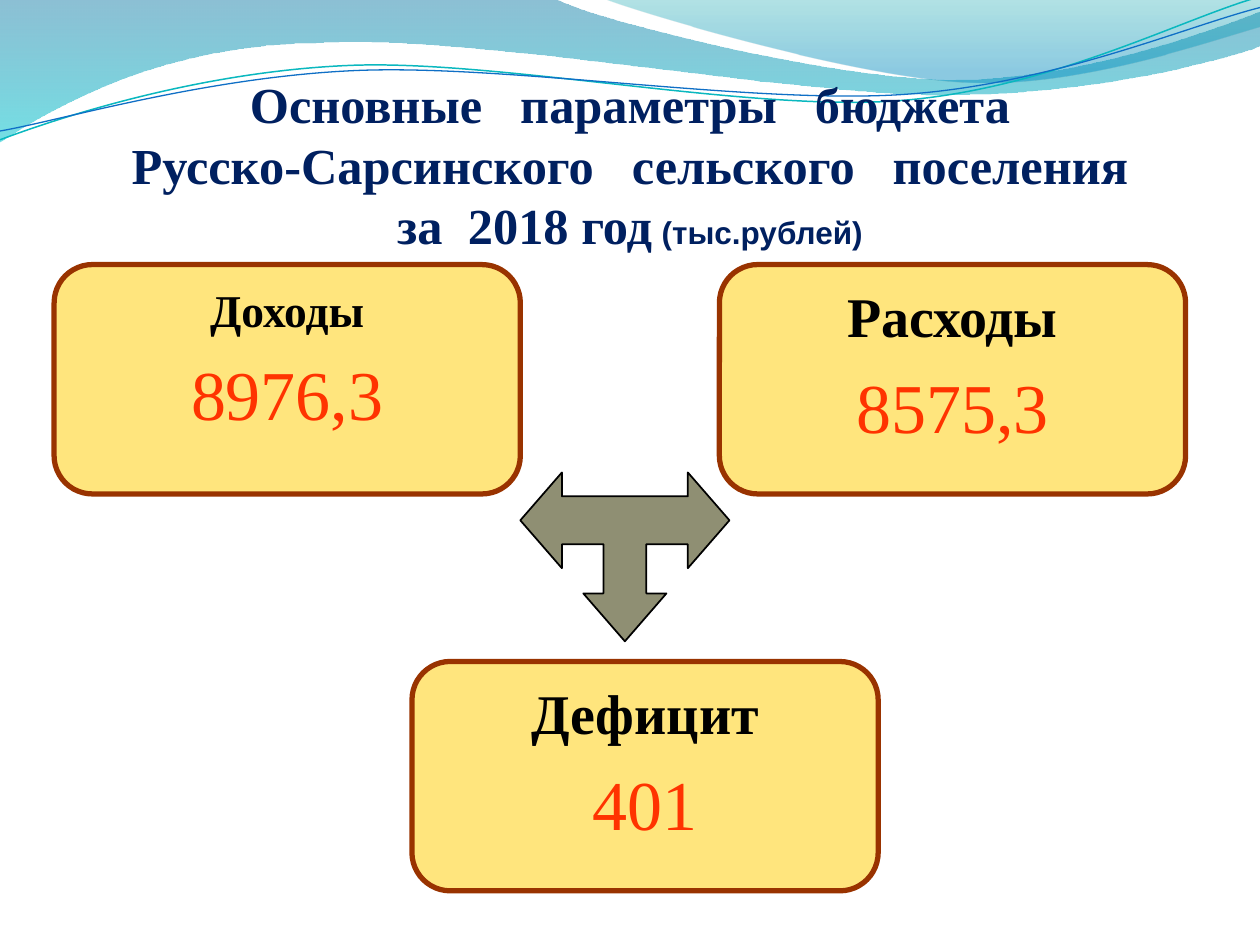
from lxml.etree import SubElement
from pptx import Presentation
from pptx.dml.color import RGBColor
from pptx.enum.shapes import MSO_SHAPE
from pptx.enum.text import MSO_ANCHOR, PP_ALIGN
from pptx.oxml.ns import qn
from pptx.util import Inches, Pt


def color(hex_value):
    return RGBColor.from_string(hex_value)


def set_opacity(shape, percents):
    """Give each colour of the shape's fill its opacity, in order."""
    for element, percent in zip(shape._element.spPr.iter(qn("a:srgbClr")), percents):
        SubElement(element, qn("a:alpha"), val=str(percent * 1000))


deck = Presentation()
deck.slide_width, deck.slide_height = Inches(10), Inches(7.5)
page = deck.slides.add_slide(deck.slide_layouts[6])

# Waves: a step of three points is a curve (two handles and an end), of one a straight line.
waves = [
    dict(start=(0, -0.01), gradient=[(0, "0074A1", 45), (1, "00C6CF", 55)], steps=[
        [(4.4, -0.01)],
        [(4.76, 0.17), (6.64, 0.63), (7.58, 0.63)],
        [(8.53, 0.63), (9.58, 0.26), (10, 0.09)],
        [(10.01, 0.36)],
        [(9.83, 0.44), (8.7, 0.76), (7.46, 0.75)],
        [(6.22, 0.75), (3.82, 0.28), (2.57, 0.34)],
        [(1.29, 0.35), (0.46, 0.83), (-0.01, 1.13)]]),
    dict(start=(4.79, -0.01), gradient=[(0, "00A1A9", 30), (0.8, "008BBF", 45)], steps=[
        [(5.09, 0.11), (6.82, 0.62), (7.69, 0.65)],
        [(8.56, 0.69), (9.61, 0.32), (10, 0.21)],
        [(10, 0)]]),
    dict(start=(0, 1.11), line=("0AB8BF", 0.85), steps=[
        [(0.48, 0.93), (1.58, 0.57), (2.77, 0.52)],
        [(3.95, 0.47), (5.93, 0.89), (7.13, 0.8)],
        [(8.33, 0.71), (9.38, 0.15), (9.98, -0.02)]]),
    dict(start=(0, 1.04), line=("0F6FC6", 0.75), steps=[
        [(0.47, 0.96), (1.64, 0.61), (2.83, 0.56)],
        [(4.03, 0.51), (5.97, 0.83), (7.17, 0.75)],
        [(8.36, 0.67), (9.41, 0.21), (10, 0.06)]]),
]
for wave in waves:
    builder = page.shapes.build_freeform(*map(Inches, wave["start"]))
    builder.add_line_segments([(Inches(x), Inches(y)) for step in wave["steps"] for x, y in step],
                              close="gradient" in wave)
    shape = builder.convert_to_shape()
    shape.shadow.inherit = False
    # Join the three segments of each curve into one Bezier segment.
    segments = iter(list(shape._element.iter(qn("a:lnTo"))))
    for step in wave["steps"]:
        first, *others = [next(segments) for _ in step]
        if others:
            first.tag = qn("a:cubicBezTo")
        for segment in others:
            first.append(segment[0])
            segment.getparent().remove(segment)
    if "gradient" in wave:
        shape.line.fill.background()
        shape.fill.gradient()
        shape.fill.gradient_angle = 270
        for stop, (position, hex_value, _) in zip(shape.fill.gradient_stops, wave["gradient"]):
            stop.position = position
            stop.color.rgb = color(hex_value)
        set_opacity(shape, [opacity for _, _, opacity in wave["gradient"]])
    else:
        shape.fill.background()
        shape.line.color.rgb = color(wave["line"][0])
        shape.line.width = Pt(wave["line"][1])

# Title: wide gaps between words are one space with extra letter spacing.
title = page.shapes.add_textbox(Inches(0.5), Inches(0.6), Inches(9), Inches(1.42))
frame = title.text_frame
frame.word_wrap = True
frame.vertical_anchor = MSO_ANCHOR.BOTTOM
frame.margin_left = frame.margin_right = frame.margin_bottom = 0
SERIF = "Times New Roman"
title_lines = [
    (["Основные", "параметры", "бюджета"], 14.4),
    (["Русско-Сарсинского", "сельского", "поселения"], 14.4),
    (["за", "2018 год"], 7.2),
]
spans = []
for words, gap in title_lines:
    if spans:
        spans.append(("\v", SERIF, 28.8, 0))
    for index, word in enumerate(words):
        if index:
            spans.append((" ", SERIF, 28.8, gap))
        spans.append((word, SERIF, 28.8, 0))
spans += [(" ", SERIF, 21.6, 0), ("(тыс.рублей)", "Arial", 18, 0)]
para = frame.paragraphs[0]
para.alignment = PP_ALIGN.CENTER
para.line_spacing = Pt(34.5)
for text, font_name, size, gap in spans:
    if text == "\v":
        para.add_line_break()
        continue
    span = para.add_run()
    span.text = text
    for name, value in dict(name=font_name, size=Pt(size), bold=True).items():
        setattr(span.font, name, value)
    span.font.color.rgb = color("002060")
    if gap:
        span.font._element.set("spc", str(round(gap * 100)))

# Budget boxes
budget = [
    ("Доходы", 26, "8976,3", 0.43, 2.1),
    ("Расходы", 32, "8575,3", 5.71, 2.1),
    ("Дефицит", 32, "401", 3.27, 5.25),
]
for label, label_size, amount, left, top in budget:
    box = page.shapes.add_shape(MSO_SHAPE.ROUNDED_RECTANGLE, Inches(left), Inches(top),
                                Inches(3.7), Inches(1.82))
    box.shadow.inherit = False
    box.fill.solid()
    box.fill.fore_color.rgb = color("FFCC00")
    set_opacity(box, [51])
    box.line.color.rgb = color("993300")
    box.line.width = Pt(3)
    frame = box.text_frame
    frame.word_wrap = True
    frame.vertical_anchor = MSO_ANCHOR.TOP
    label_para, amount_para = frame.paragraphs[0], frame.add_paragraph()
    amount_para.space_before = Pt(8)
    for para, text, size, bold, hex_value in [
        (label_para, label, label_size, True, "000000"),
        (amount_para, amount, 40, False, "FF3300"),
    ]:
        para.alignment = PP_ALIGN.CENTER
        span = para.add_run()
        span.text = text
        for name, value in dict(name=SERIF, size=Pt(size), bold=bold).items():
            setattr(span.font, name, value)
        span.font.color.rgb = color(hex_value)

# Three-way arrow: the right half, mirrored about its vertical axis
AXIS = 4.96
right_half = [(0.33, 4.71), (0.17, 4.71), (0.17, 4.32), (0.5, 4.32), (0.5, 4.51),
              (0.83, 4.13), (0.5, 3.75), (0.5, 3.94)]
left_half = [(-x, y) for x, y in reversed(right_half)]
outline = [(Inches(AXIS + x), Inches(y)) for x, y in [(0, 5.09)] + right_half + left_half]
builder = page.shapes.build_freeform(*outline[0])
builder.add_line_segments(outline[1:], close=True)
arrow = builder.convert_to_shape()
arrow.shadow.inherit = False
arrow.fill.solid()
arrow.fill.fore_color.rgb = color("333300")
set_opacity(arrow, [55])
arrow.line.color.rgb = color("000000")
arrow.line.width = Pt(1)

deck.save("out.pptx")
